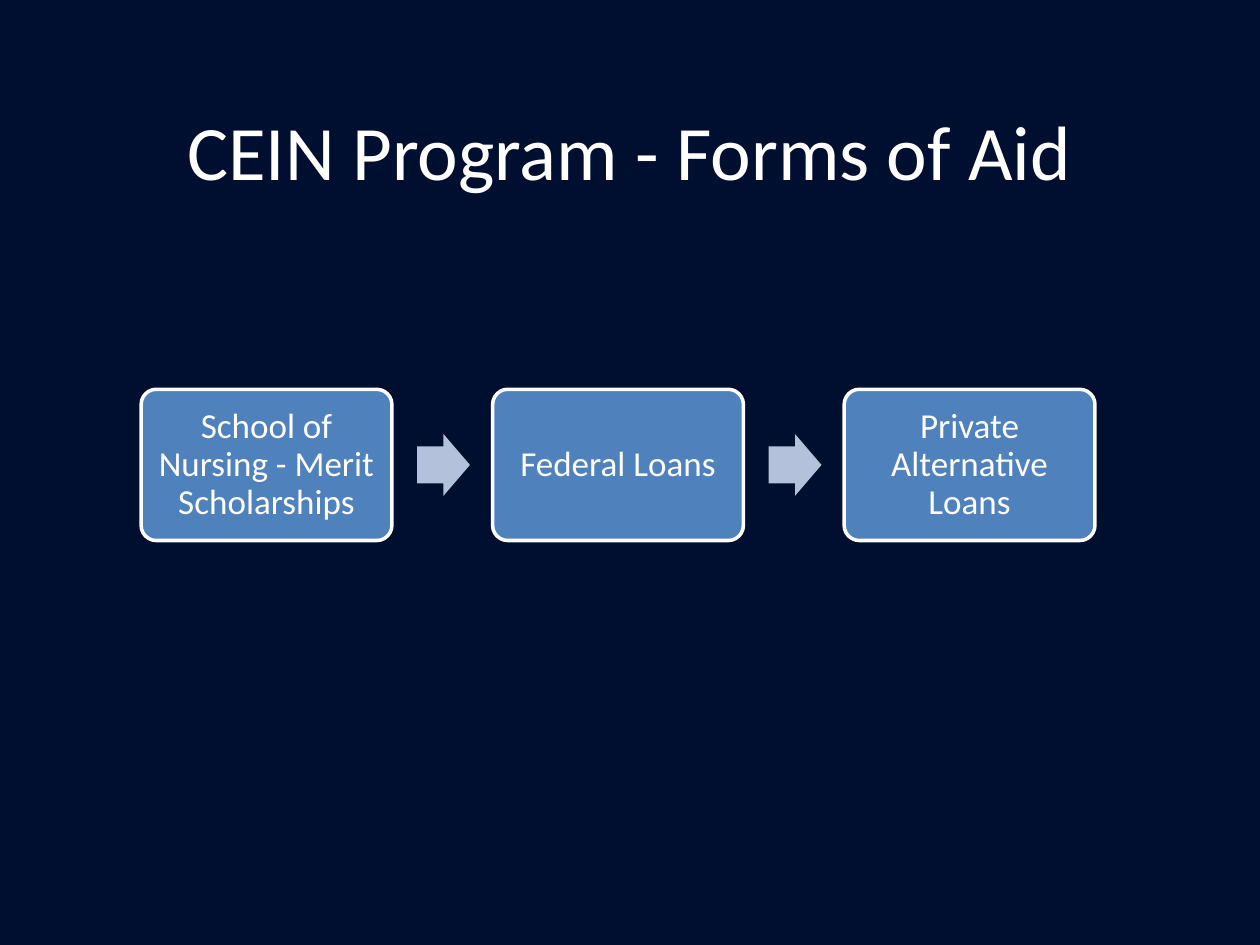
import pptx
import pptx.dml.color
import pptx.enum.shapes
import pptx.enum.text
import pptx.util

Inches = pptx.util.Inches
Pt = pptx.util.Pt
MSO_SHAPE = pptx.enum.shapes.MSO_SHAPE


def rgb(value):
    return pptx.dml.color.RGBColor.from_string(value)


class Deck:
    font = "Calibri"
    text_color = "FFFFFF"
    back_color = "000E2F"
    box_color = "4F81BD"
    arrow_color = "B3C1DB"

    def __init__(self, prs):
        self.s = prs.slides.add_slide(prs.slide_layouts[6])
        fill = self.s.background.fill
        fill.solid()
        fill.fore_color.rgb = rgb(self.back_color)

    def add_text(self, sp, text, size):
        tf = sp.text_frame
        tf.word_wrap = True
        tf.vertical_anchor = pptx.enum.text.MSO_ANCHOR.MIDDLE
        p = tf.paragraphs[0]
        p.alignment = pptx.enum.text.PP_ALIGN.CENTER
        r = p.add_run()
        r.text = text
        r.font.name = self.font
        r.font.size = Pt(size)
        r.font.color.rgb = rgb(self.text_color)
        return tf

    def title(self, text, x, y, w, h):
        sp = self.s.shapes.add_textbox(Inches(x), Inches(y), Inches(w), Inches(h))
        self.add_text(sp, text, 44)

    def shape(self, kind, x, y, w, h, color, adjustments):
        sp = self.s.shapes.add_shape(kind, Inches(x), Inches(y), Inches(w), Inches(h))
        sp.shadow.inherit = False
        sp.fill.solid()
        sp.fill.fore_color.rgb = rgb(color)
        for i, value in enumerate(adjustments):
            sp.adjustments[i] = value
        return sp

    def box(self, text, x, y, w, h):
        sp = self.shape(MSO_SHAPE.ROUNDED_RECTANGLE, x, y, w, h, self.box_color, [0.1])
        sp.line.color.rgb = rgb(self.text_color)
        sp.line.width = Pt(2)
        tf = self.add_text(sp, text, 20)
        tf.margin_left = tf.margin_right = Inches(0.08)
        tf.margin_top = tf.margin_bottom = Inches(0.08)
        tf.paragraphs[0].line_spacing = 0.9

    def arrow(self, x, y, w, h):
        sp = self.shape(MSO_SHAPE.RIGHT_ARROW, x, y, w, h, self.arrow_color, [0.6, 0.5])
        sp.line.fill.background()


def main():
    prs = pptx.Presentation()
    prs.slide_width = Inches(10)
    prs.slide_height = Inches(7.5)
    deck = Deck(prs)
    deck.title("CEIN Program - Forms of Aid", 0.5, 0.59, 9, 1.2)

    aids = ["School of Nursing - Merit Scholarships", "Federal Loans", "Private Alternative Loans"]
    left, top, width, height, gap = 1.12, 3.09, 1.99, 1.2, 0.8
    arrow_w, arrow_h = 0.42, 0.49
    for i, aid in enumerate(aids):
        x = left + i * (width + gap)
        if i:
            deck.arrow(x - 0.6, top + (height - arrow_h) / 2, arrow_w, arrow_h)
        deck.box(aid, x, top, width, height)

    prs.save("out.pptx")


if __name__ == "__main__":
    main()
